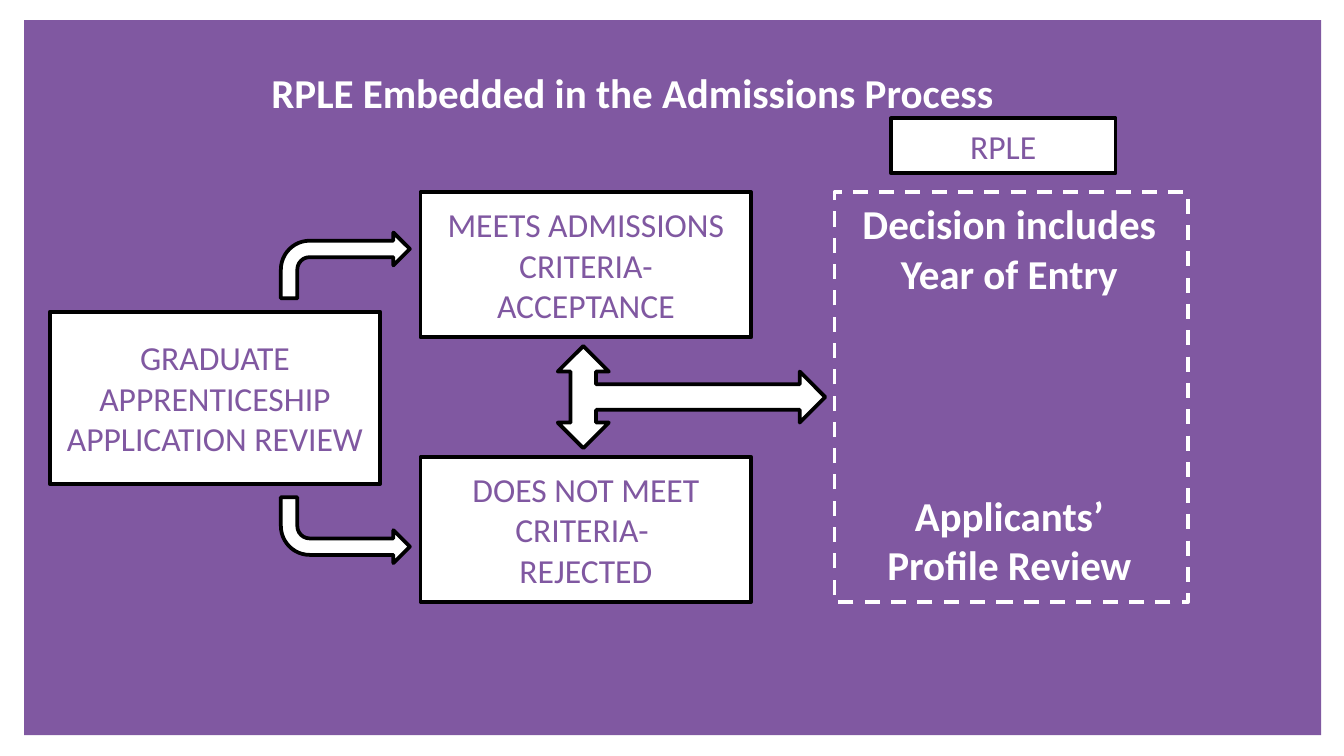
"""Build the slide on how RPLE is embedded in the admissions process."""
import pptx
import pptx.dml.color
import pptx.enum.dml
import pptx.enum.shapes
import pptx.enum.text
import pptx.util

Inch = pptx.util.Inches
Kind = pptx.enum.shapes.MSO_SHAPE
Anchor = pptx.enum.text.MSO_ANCHOR

WIDE = 10
HIGH = WIDE * 9 / 16
HUES = {"plum": "8058A1", "white": "FFFFFF", "black": "000000"}
COLS = {"start": 0.37, "turn": 2.09, "check": 3.13, "fork": 4.15, "frame": 6.21, "tag": 6.63}
ROWS = {"title": 0.45, "tag": 0.88, "top": 1.43, "mid": 2.32, "low": 3.4, "end": 4.48}
BOX = 2.46
STEP = ROWS["end"] - ROWS["low"]
FRAME = 2.63

BOXES = [
    (["GRADUATE APPRENTICESHIP APPLICATION REVIEW"], "start", "mid", BOX, 1.28),
    (["MEETS ADMISSIONS CRITERIA-ACCEPTANCE"], "check", "top", BOX, STEP),
    (["DOES NOT MEET CRITERIA- ", "REJECTED"], "check", "low", BOX, STEP),
    (["RPLE"], "tag", "tag", 1.67, 0.41),
]
NOTES = [("Decision includes Year of Entry", 1.43), ("Applicants’ Profile Review", 3.6)]
TURNS = [(1.73, False), (3.7, True)]


def tint(name):
    return pptx.dml.color.RGBColor.from_string(HUES[name])


def write(shape, lines, size=18, hue="plum", bold=False, anchor=Anchor.MIDDLE):
    frame = shape.text_frame
    frame.word_wrap = True
    frame.vertical_anchor = anchor
    for i, line in enumerate(lines):
        para = frame.paragraphs[0] if i == 0 else frame.add_paragraph()
        para.alignment = pptx.enum.text.PP_ALIGN.CENTER
        run = para.add_run()
        run.text = line
        run.font.name = "Calibri"
        run.font.size = pptx.util.Pt(size)
        run.font.bold = bold
        run.font.color.rgb = tint(hue)


def draw(slide, kind, area, fill="white", line="black"):
    shape = slide.shapes.add_shape(kind, *map(Inch, area))
    shape.shadow.inherit = False
    if fill:
        shape.fill.solid()
        shape.fill.fore_color.rgb = tint(fill)
    else:
        shape.fill.background()
    if line:
        shape.line.color.rgb = tint(line)
        shape.line.width = pptx.util.Pt(2)
    else:
        shape.line.fill.background()
    return shape


def label(slide, text, area):
    box = slide.shapes.add_textbox(*map(Inch, area))
    write(box, [text], size=22, hue="white", bold=True, anchor=Anchor.TOP)


def main():
    deck = pptx.Presentation()
    deck.slide_width, deck.slide_height = Inch(WIDE), Inch(HIGH)
    slide = deck.slides.add_slide(deck.slide_layouts[6])

    draw(slide, Kind.RECTANGLE, (0.18, 0.15, 9.65, 5.32), fill="plum", line=None)
    label(slide, "RPLE Embedded in the Admissions Process", (0.57, ROWS["title"], 8.27, 0.49))

    for lines, col, row, wide, high in BOXES:
        write(draw(slide, Kind.RECTANGLE, (COLS[col], ROWS[row], wide, high)), lines)

    for text, top in NOTES:
        label(slide, text, (6.28, top, BOX, 0.87))
    area = (COLS["frame"], ROWS["top"], FRAME, ROWS["end"] - ROWS["top"])
    frame = draw(slide, Kind.RECTANGLE, area, fill=None, line="white")
    frame.line.dash_style = pptx.enum.dml.MSO_LINE.DASH

    wide, high = 0.76, 1.99
    mid = (ROWS["top"] + ROWS["end"]) / 2
    area = (COLS["fork"] + (high - wide) / 2, mid - high / 2, wide, high)
    fork = draw(slide, Kind.LEFT_RIGHT_UP_ARROW, area)
    fork.rotation = 90

    for top, flip in TURNS:
        turn = draw(slide, Kind.BENT_ARROW, (COLS["turn"], top, 0.96, 0.49))
        if flip:
            turn.element.spPr.xfrm.set("flipV", "1")

    deck.save("out.pptx")


if __name__ == "__main__":
    main()
